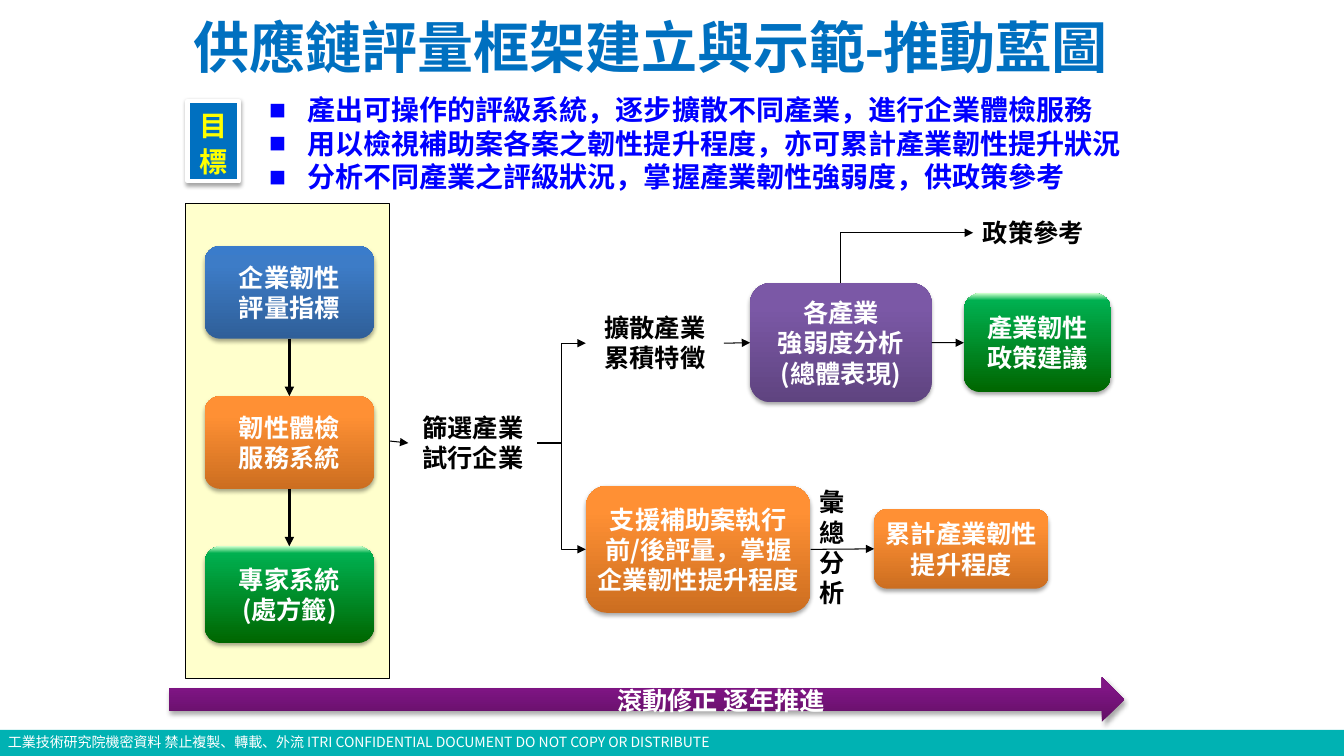
from copy import deepcopy
from dataclasses import dataclass

from lxml import etree
from pptx import Presentation
from pptx.dml.color import RGBColor
from pptx.enum.shapes import MSO_CONNECTOR, MSO_SHAPE
from pptx.enum.text import MSO_ANCHOR, PP_ALIGN
from pptx.oxml.ns import qn
from pptx.util import Inches, Pt

RECT, ROUND, ARROW = MSO_SHAPE.RECTANGLE, MSO_SHAPE.ROUNDED_RECTANGLE, MSO_SHAPE.RIGHT_ARROW
STRAIGHT, ELBOW = MSO_CONNECTOR.STRAIGHT, MSO_CONNECTOR.ELBOW
LEFT, CENTER = PP_ALIGN.LEFT, PP_ALIGN.CENTER
TOP, MIDDLE = MSO_ANCHOR.TOP, MSO_ANCHOR.MIDDLE
SITE_TOP, SITE_LEFT, SITE_BOTTOM, SITE_RIGHT = range(4)


@dataclass(frozen=True)
class Theme:
    font: str = "Noto Sans CJK SC"
    title_font: str = "Arial"
    title_size: int = 40
    goal_size: int = 20
    body_size: int = 18
    footer_size: int = 10
    white: str = "FFFFFF"
    black: str = "000000"
    title: str = "0070C0"
    goal: str = "0000FF"
    goal_label: str = "FFFF00"
    panel: str = "FFFFCC"
    footer: str = "00B2B3"
    # Gradient stops run from the bottom edge to the top edge
    blue: tuple = ((0, "2F5F99"), (0.8, "3D7CC7"), (1, "3A7CCB"))
    orange: tuple = ((0, "CC6E20"), (0.8, "FF9034"), (1, "FF9136"))
    green: tuple = ((0, "006600"), (0.93, "00B050"), (1, "CCFFCC"))
    violet: tuple = ((0, "5F4480"), (0.8, "7B58A6"), (1, "7C57A8"))
    purple: tuple = ((0, "631066"), (0.8, "801585"), (1, "831388"))


T = Theme()


def rgb(value):
    return RGBColor.from_string(value)


def add_child(parent, tag, **attrs):
    return etree.SubElement(parent, qn(tag), attrs)


def write(sp, lines, size=T.body_size, color=T.black, bold=True, align=LEFT, anchor=TOP,
          side=0.1, wrap=True, leading=1.2, bullet=None):
    tf = sp.text_frame
    frame = {"word_wrap": wrap, "vertical_anchor": anchor,
             "margin_left": Inches(side), "margin_right": Inches(side)}
    for name, value in frame.items():
        setattr(tf, name, value)
    for i, line in enumerate(lines):
        p = tf.paragraphs[0] if i == 0 else tf.add_paragraph()
        p.alignment, p.line_spacing = align, Pt(size * leading)
        if bullet:
            pPr = p._p.get_or_add_pPr()
            pPr.set("marL", str(Inches(0.38)))
            pPr.set("indent", str(-Inches(0.38)))
            add_child(pPr, "a:buFont", typeface="Arial")
            add_child(pPr, "a:buChar", char=bullet)
        r = p.add_run()
        r.text = line
        for name, value in {"size": Pt(size), "bold": bold, "name": T.font}.items():
            setattr(r.font, name, value)
        r.font.color.rgb = rgb(color)
        add_child(r._r.get_or_add_rPr(), "a:ea", typeface=T.font)


def add_text(slide, x, y, w, h, lines, **style):
    sp = slide.shapes.add_textbox(*map(Inches, (x, y, w, h)))
    write(sp, lines, **style)
    return sp


def add_box(slide, kind, x, y, w, h, fill, line=None, shadow=True):
    sp = slide.shapes.add_shape(kind, *map(Inches, (x, y, w, h)))
    if isinstance(fill, str):
        sp.fill.solid()
        sp.fill.fore_color.rgb = rgb(fill)
    else:
        sp.fill.gradient()
        sp.fill.gradient_angle = 90
        stops = sp._element.spPr.find(".//" + qn("a:gsLst"))
        stops.append(deepcopy(stops[0]))
        for stop, (position, color) in zip(sp.fill.gradient_stops, fill):
            stop.position, stop.color.rgb = position, rgb(color)
    if line:
        sp.line.color.rgb, sp.line.width = rgb(line[0]), Pt(line[1])
    else:
        sp.line.fill.background()
    sp.shadow.inherit = False
    if shadow:
        effects = sp._element.spPr.find(qn("a:effectLst"))
        outer = add_child(effects, "a:outerShdw", blurRad=str(Pt(3.1)), dist=str(Pt(1.8)),
                          dir="5400000", rotWithShape="0")
        add_child(add_child(outer, "a:srgbClr", val=T.black), "a:alpha", val="35000")
    return sp


def add_node(slide, x, y, w, h, fill, lines, side=0):
    sp = add_box(slide, ROUND, x, y, w, h, fill)
    write(sp, lines, color=T.white, align=CENTER, anchor=MIDDLE, side=side)
    return sp


def connect(slide, start, start_site, end, end_site, kind=STRAIGHT, width=0.75):
    sp = slide.shapes.add_connector(kind, 0, 0, 0, 0)
    sp.begin_connect(start, start_site)
    sp.end_connect(end, end_site)
    sp.line.color.rgb, sp.line.width = rgb(T.black), Pt(width)
    add_child(sp.line._get_or_add_ln(), "a:tailEnd", type="triangle")
    add_child(sp._element.spPr, "a:effectLst")
    return sp


def turn_up_then_right(sp):
    """Give an elbow one corner: up from its start, then right to its end."""
    x, y, w, h = sp.left, sp.top, sp.width, sp.height
    sp.left, sp.top = x + (w - h) // 2, y + (h - w) // 2
    sp.width, sp.height = h, w
    spPr = sp._element.spPr
    for name, value in {"rot": "5400000", "flipH": "1", "flipV": "1"}.items():
        spPr.find(qn("a:xfrm")).set(name, value)
    spPr.find(qn("a:prstGeom")).set("prst", "bentConnector2")


def build_title(slide, x, y, w, h):
    sp = slide.shapes.title
    for name, value in zip(("left", "top", "width", "height"), (x, y, w, h)):
        setattr(sp, name, Inches(value))
    tf = sp.text_frame
    tf.vertical_anchor = MIDDLE
    p = tf.paragraphs[0]
    p.alignment = LEFT
    r = p.add_run()
    r.text = "供應鏈評量框架建立與示範-推動藍圖"
    for name, value in {"size": Pt(T.title_size), "bold": True, "name": T.title_font}.items():
        setattr(r.font, name, value)
    r.font.color.rgb = rgb(T.title)


def build_goals(slide, x, y):
    goals = ["產出可操作的評級系統，逐步擴散不同產業，進行企業體檢服務",
             "用以檢視補助案各案之韌性提升程度，亦可累計產業韌性提升狀況",
             "分析不同產業之評級狀況，掌握產業韌性強弱度，供政策參考"]
    add_text(slide, x + 0.71, y, 8.71, 1.11, goals, size=T.goal_size, color=T.goal,
             wrap=False, bullet="■")
    sp = add_box(slide, RECT, x, y + 0.13, 0.51, 0.8, T.title, line=(T.white, 3))
    write(sp, ["目標"], size=T.goal_size, color=T.goal_label, align=CENTER, leading=1.3)


def build_system_panel(slide, x, y):
    panel = add_box(slide, RECT, x, y, 2.02, 4.71, T.panel, (T.black, 0.75), shadow=False)
    steps = [(0.92, T.blue, ["企業韌性", "評量指標"]),
             (0.92, T.orange, ["韌性體檢", "服務系統"]),
             (0.96, T.green, ["專家系統", "(處方籤)"])]
    nodes = [add_node(slide, x + 0.19, y + 0.42 + 1.49 * i, 1.68, h, fill, lines)
             for i, (h, fill, lines) in enumerate(steps)]
    for upper, lower in zip(nodes, nodes[1:]):
        connect(slide, upper, SITE_BOTTOM, lower, SITE_TOP, width=2.25)
    return panel


def build_flow(slide, x, y, panel):
    # Trial companies, then two branches
    trial = add_text(slide, x, y + 1.93, 1.28, 0.71, ["篩選產業試行企業"], align=CENTER)
    spread = add_text(slide, x + 1.76, y + 0.94, 1.37, 0.71, ["擴散產業 累積特徵"], align=CENTER)
    support = add_node(slide, x + 1.76, y + 2.71, 2.23, 1.26, T.orange,
                       ["支援補助案執行", "前/後評量，掌握", "企業韌性提升程度"])
    # Upper branch: industry analysis and policy
    analysis = add_node(slide, x + 3.39, y + 0.7, 1.8, 1.18, T.violet,
                        ["各產業", "強弱度分析", "(總體表現)"], side=0.1)
    advice = add_node(slide, x + 5.51, y + 0.8, 1.46, 0.98, T.green, ["產業韌性", "政策建議"])
    policy = add_text(slide, x + 5.6, y, 1.21, 0.4, ["政策參考"], wrap=False)
    # Lower branch: accumulated results
    total = add_node(slide, x + 4.62, y + 2.94, 1.73, 0.79, T.orange, ["累計產業韌性提升程度"])
    add_text(slide, x + 3.98, y + 2.67, 0.69, 1.31, ["彙總", "分析"])
    # Arrows
    for start, end, kind in [(panel, trial, STRAIGHT), (trial, spread, ELBOW),
                             (trial, support, ELBOW), (spread, analysis, STRAIGHT),
                             (analysis, advice, STRAIGHT), (support, total, STRAIGHT)]:
        connect(slide, start, SITE_RIGHT, end, SITE_LEFT, kind)
    turn_up_then_right(connect(slide, analysis, SITE_TOP, policy, SITE_LEFT, ELBOW))


def build_timeline(slide, x, y):
    add_box(slide, ARROW, x, y, 9.47, 0.44, T.purple)
    add_text(slide, x + 2.46, y + 0.03, 6.02, 0.4, ["滾動修正 逐年推進"],
             color=T.white, align=CENTER)


def build_footer(slide, x, y, w, h):
    add_box(slide, RECT, x, y, w, h, T.footer, shadow=False)
    notice = "工業技術研究院機密資料 禁止複製、轉載、外流 ITRI CONFIDENTIAL DOCUMENT DO NOT COPY OR DISTRIBUTE"
    add_text(slide, x - 0.02, y - 0.01, 10.38, 0.27, [notice], size=T.footer_size,
             color=T.white, bold=False)


def main():
    prs = Presentation()
    prs.slide_width, prs.slide_height = Inches(13.33), Inches(7.5)
    slide = prs.slides.add_slide(prs.slide_layouts[5])
    build_footer(slide, 0, 7.24, 13.33, 0.26)
    build_title(slide, 1.82, 0.09, 10, 0.74)
    build_goals(slide, 1.86, 0.87)
    panel = build_system_panel(slide, 1.84, 2.02)
    build_flow(slide, 4.05, 2.11, panel)
    build_timeline(slide, 1.68, 6.72)
    prs.save("out.pptx")


if __name__ == "__main__":
    main()
